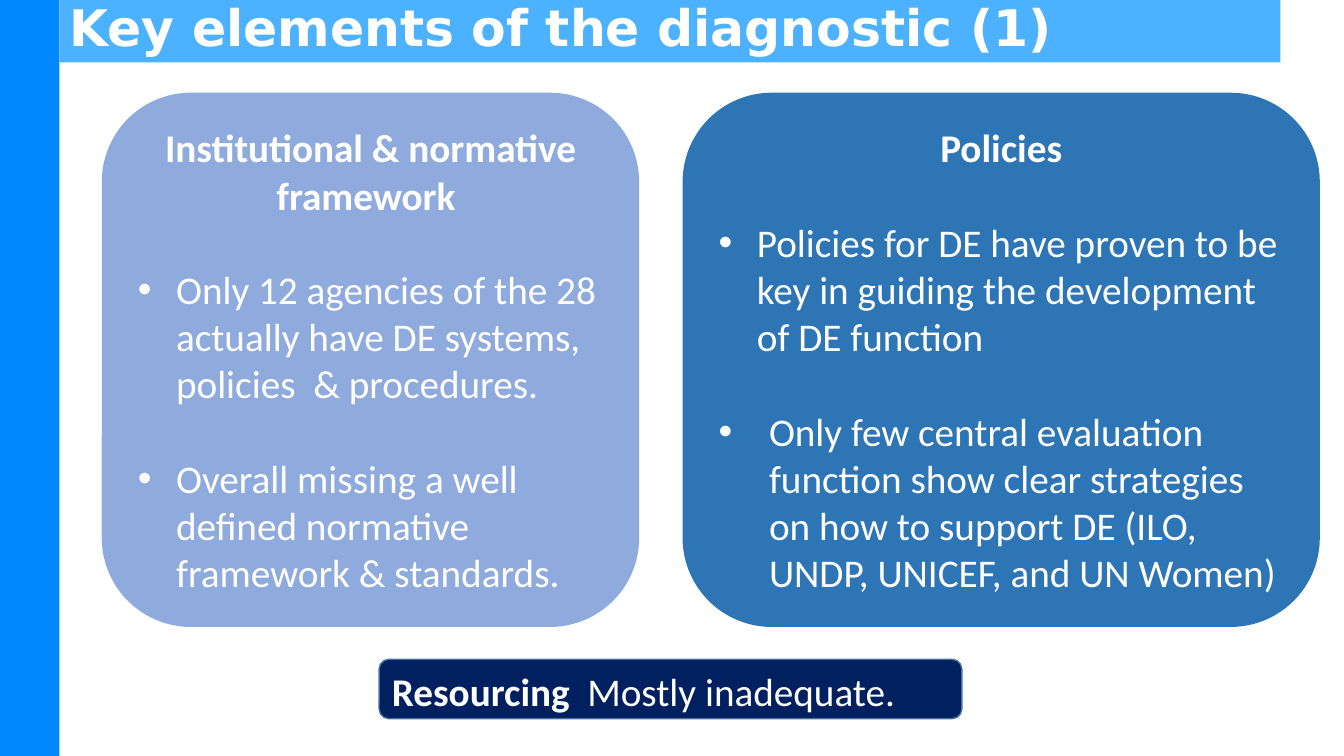
from dataclasses import dataclass

from lxml import etree
from pptx import Presentation
from pptx.dml.color import RGBColor
from pptx.enum.shapes import MSO_SHAPE
from pptx.enum.text import MSO_ANCHOR, PP_ALIGN
from pptx.oxml.ns import qn
from pptx.util import Inches, Pt

RECT = MSO_SHAPE.RECTANGLE
ROUND = MSO_SHAPE.ROUNDED_RECTANGLE
TOP = MSO_ANCHOR.TOP
MIDDLE = MSO_ANCHOR.MIDDLE
LEFT = PP_ALIGN.LEFT
CENTER = PP_ALIGN.CENTER

WHITE = "FFFFFF"
BODY = "Calibri"
SIZE = 28
GAP = 34


@dataclass
class Bullet:
    text: str
    indent: float = 0.38


@dataclass
class Card:
    left: float
    width: float
    fill: str
    title: str
    bullets: list[Bullet]


CARDS = [
    Card(1.01, 5.33, "8FAADC", "Institutional & normative framework ", [
        Bullet("Only 12 agencies of the 28 actually have DE systems, "
               "policies  & procedures."),
        Bullet("Overall missing a well defined normative framework "
               "& standards."),
    ]),
    Card(6.77, 6.32, "2E75B6", "Policies", [
        Bullet("Policies for DE have proven to be key in guiding "
               "the development of DE function"),
        Bullet("Only few central evaluation function show clear strategies "
               "on how to support DE (ILO, UNDP, UNICEF, and UN Women)", 0.5),
    ]),
]


def color(code: str) -> RGBColor:
    return RGBColor.from_string(code)


def add_box(slide, kind, left: float, top: float, width: float,
            height: float, fill: str, anchor=TOP):
    box = slide.shapes.add_shape(kind, Inches(left), Inches(top),
                                 Inches(width), Inches(height))
    box.shadow.inherit = False
    box.fill.solid()
    box.fill.fore_color.rgb = color(fill)
    box.line.fill.background()
    box.text_frame.word_wrap = True
    box.text_frame.vertical_anchor = anchor
    box.text_frame.paragraphs[0].alignment = LEFT
    return box


def add_run(para, text: str, bold: bool = False, size: int = SIZE,
            face: str = BODY) -> None:
    run = para.add_run()
    run.text = text
    run.font.name = face
    run.font.size = Pt(size)
    run.font.bold = bold
    run.font.color.rgb = color(WHITE)


def add_bullet(frame, bullet: Bullet) -> None:
    para = frame.add_paragraph()
    para.alignment = LEFT
    para.space_before = Pt(GAP)
    props = para._p.get_or_add_pPr()
    props.set("marL", str(Inches(bullet.indent)))
    props.set("indent", str(-Inches(bullet.indent)))
    etree.SubElement(props, qn("a:buFont")).set("typeface", "Arial")
    etree.SubElement(props, qn("a:buChar")).set("char", "•")
    add_run(para, bullet.text)


def add_card(slide, card: Card) -> None:
    box = add_box(slide, ROUND, card.left, 0.92, card.width, 5.3, card.fill)
    head = box.text_frame.paragraphs[0]
    head.alignment = CENTER
    add_run(head, card.title, bold=True)
    for bullet in card.bullets:
        add_bullet(box.text_frame, bullet)


def add_title(slide) -> None:
    box = add_box(slide, RECT, 0.59, -0.03, 12.11, 0.65, "0091FF", MIDDLE)
    tint = box._element.spPr.find(qn("a:solidFill"))[0]
    etree.SubElement(tint, qn("a:alpha")).set("val", "70000")
    para = box.text_frame.paragraphs[0]
    para.line_spacing = 0.9
    add_run(para, "Key elements of the diagnostic (1)", True, 36,
            "DejaVu Sans")


def add_footer(slide) -> None:
    box = add_box(slide, ROUND, 3.76, 6.54, 5.78, 0.59, "002060")
    box.line.color.rgb = color("43739E")
    box.line.width = Pt(1)
    para = box.text_frame.paragraphs[0]
    add_run(para, "Resourcing  ", bold=True)
    add_run(para, "Mostly inadequate.")


def main() -> None:
    deck = Presentation()
    deck.slide_width = Inches(13.33)
    deck.slide_height = Inches(7.5)
    slide = deck.slides.add_slide(deck.slide_layouts[6])
    add_box(slide, RECT, 0, 0, 0.59, 7.5, "0088FF")
    add_title(slide)
    for card in CARDS:
        add_card(slide, card)
    add_footer(slide)
    deck.save("out.pptx")


if __name__ == "__main__":
    main()
